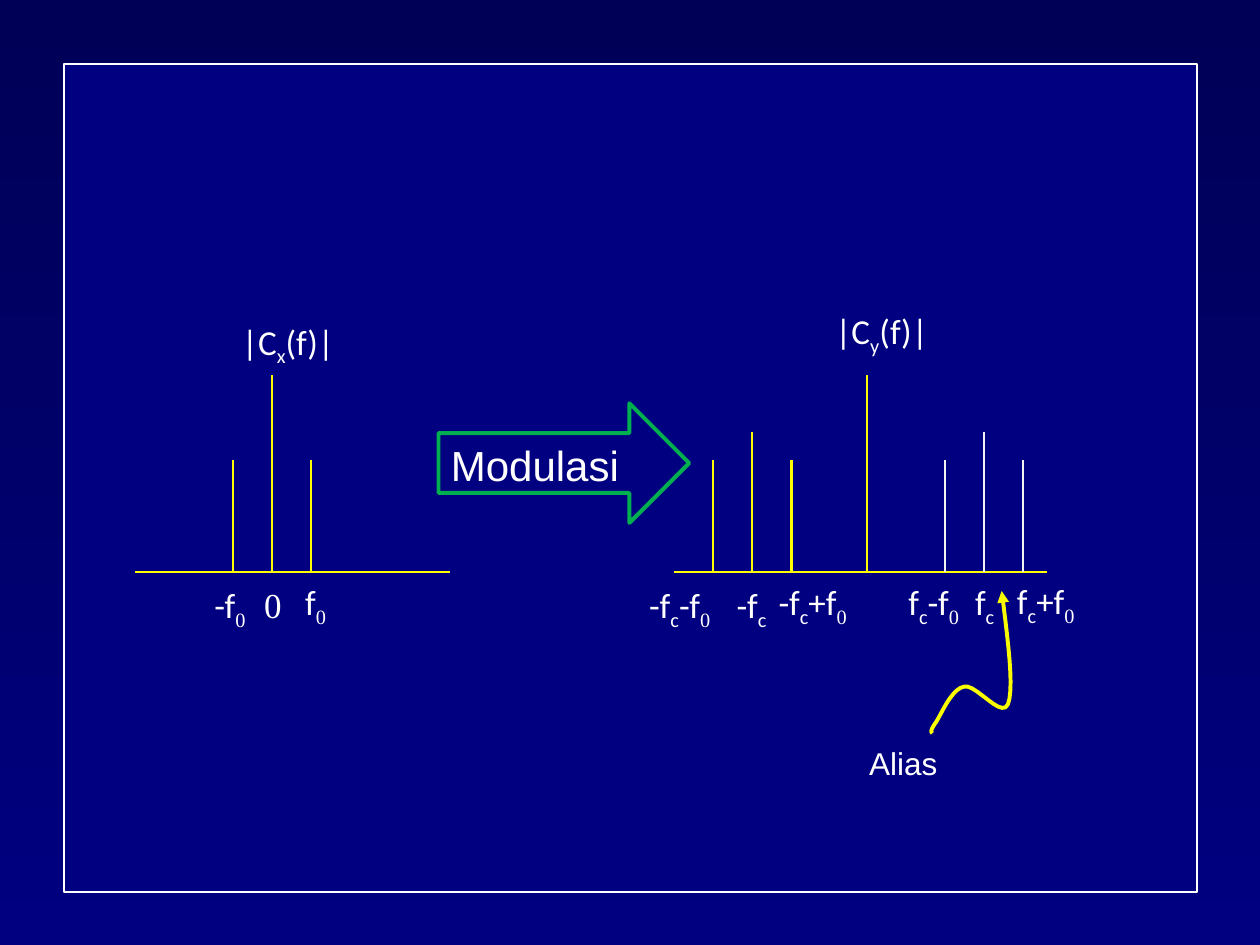
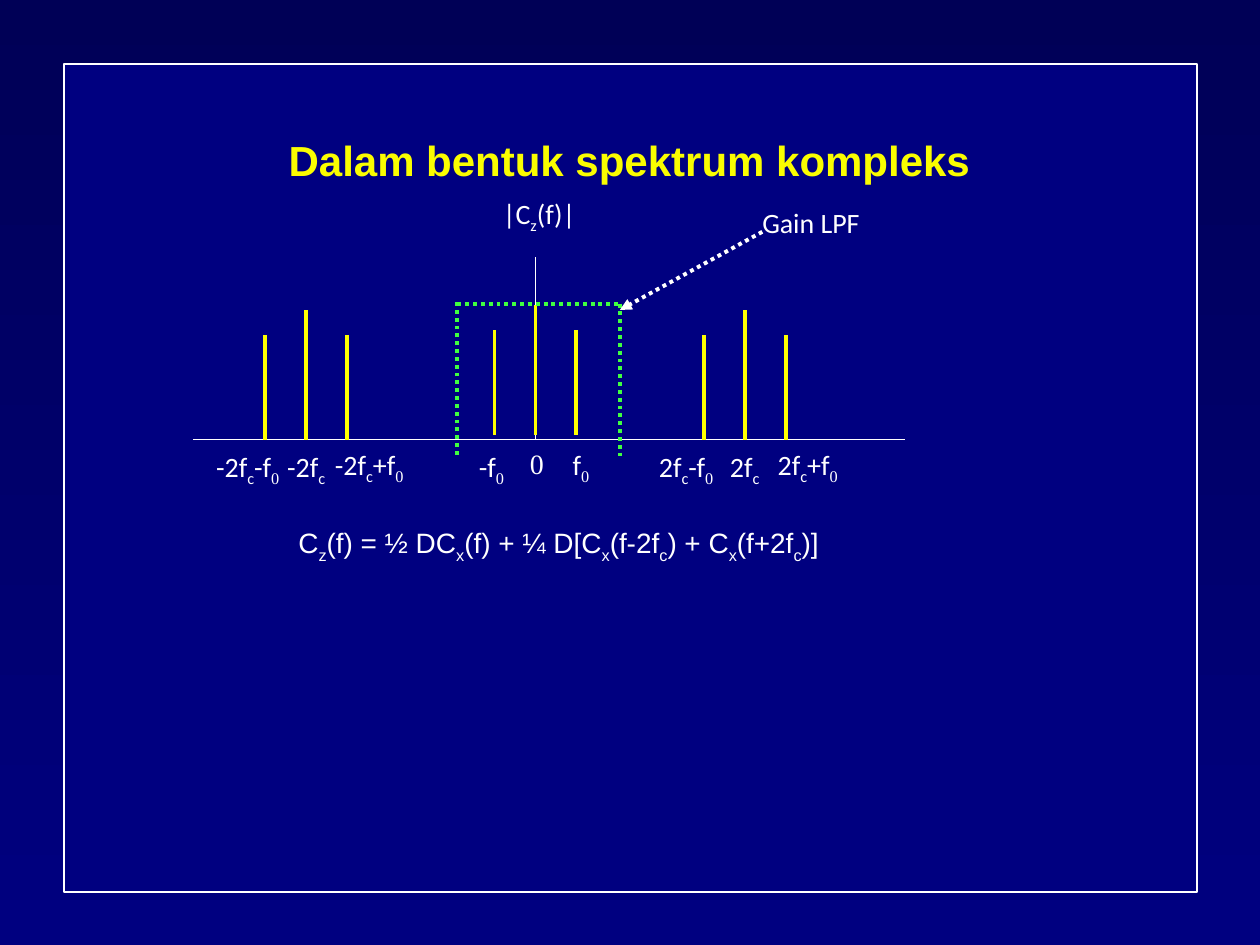
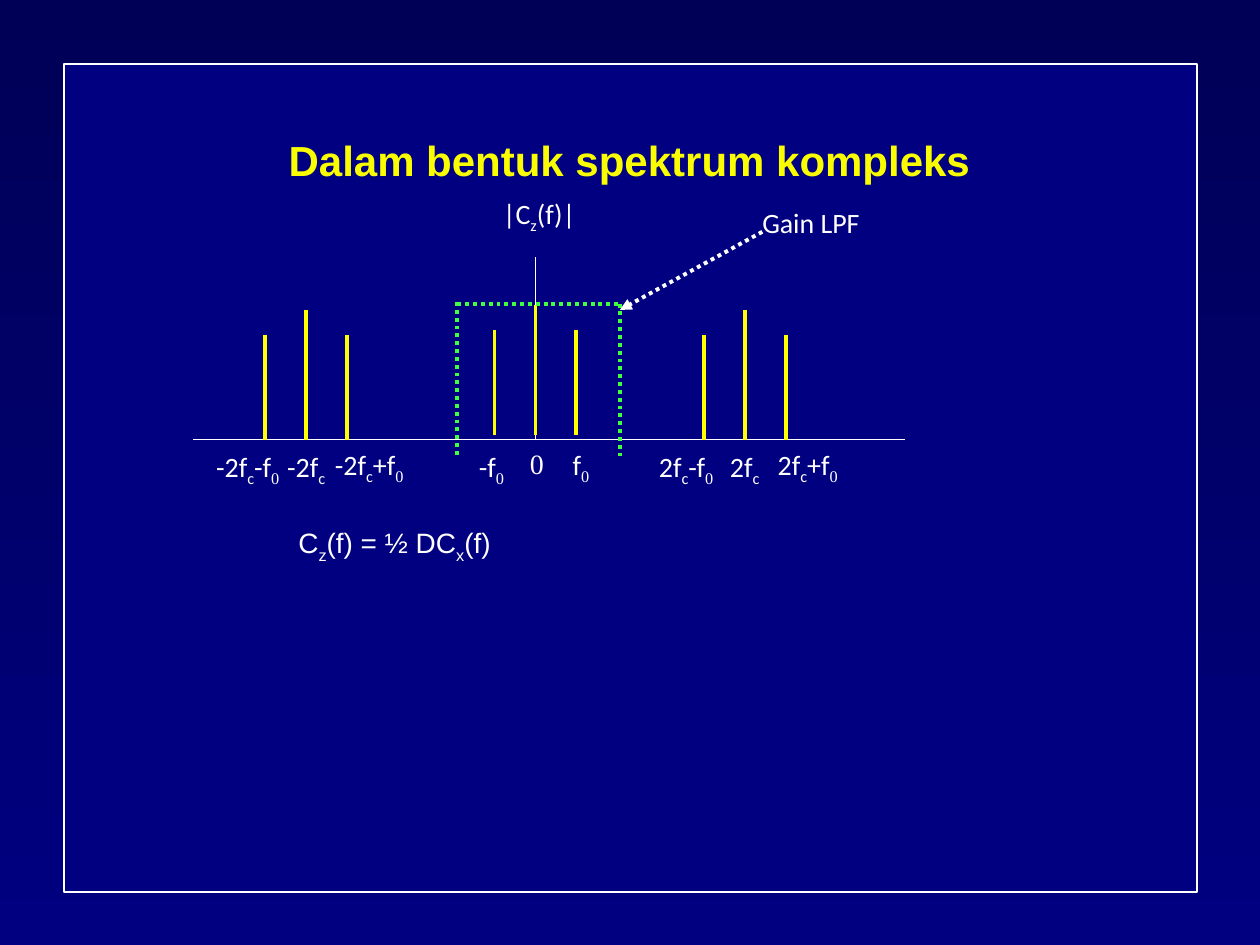
from pptx import Presentation
from pptx import util as u
from pptx.dml.color import RGBColor
from pptx.enum import dml, shapes, text
from pptx.oxml.ns import qn
from lxml import etree

WHITE, PALE, YELLOW, GOLD = "FFFFFF", "F2F2F2", "FFFF00", "FAFD00"
NAVY, DARK, GREEN, LIME = "000080", "000056", "00B050", "40FF40"
DOTTED = dml.MSO_LINE.ROUND_DOT
ALIGN = text.PP_ALIGN

# An underscore marks the next character as a subscript.
# Lobe: centre, colour, labels as (text, offset from centre, top, width).
MODULATION = dict(
    size=20, step=0.31, axis_color=YELLOW, stick_width=1.5,
    axes=[(1.07, 3.57, 2.16), (5.35, 8.31, 6.88)], axis_y=4.54, axis_top=2.98,
    stick_heights=(0.89, 1.11, 0.89),
    lobes=[
        (2.16, YELLOW, 4.54, [("-f_0", -0.49, 4.63, 0.31), ("0", -0.15, 4.63, 0.31),
                              ("f_0", 0.19, 4.61, 0.31)]),
        (5.97, YELLOW, 4.54, [("-f_c-f_0", -0.97, 4.63, 0.79), ("-f_c", -0.16, 4.63, 0.31),
                              ("-f_c+f_0", 0.18, 4.61, 0.6)]),
        (7.81, PALE, 4.54, [("f_c-f_0", -0.62, 4.61, 0.44), ("f_c", -0.15, 4.61, 0.31),
                            ("f_c+f_0", 0.19, 4.6, 0.6)]),
    ],
    captions=[("|C_x(f)|", 1.92, 2.54, 0.82), ("|C_y(f)|", 6.63, 2.46, 0.95)],
)


def side_labels(carrier):
    return [(carrier + "-f_0", -0.74, 3.57, 0.55), (carrier, -0.16, 3.57, 0.32),
            (carrier + "+f_0", 0.19, 3.55, 0.62)]


DEMODULATION = dict(
    size=16, step=0.325, axis_color=WHITE, stick_width=2.25,
    axes=[(1.53, 7.18, 4.25)], axis_y=3.49, axis_top=2.04,
    stick_heights=(0.83, 1.03, 0.83),
    lobes=[
        (2.43, YELLOW, 3.49, side_labels("-2f_c")),
        (4.25, YELLOW, 3.45, [("-f_0", -0.51, 3.57, 0.32), ("0", -0.15, 3.54, 0.32),
                              ("f_0", 0.2, 3.55, 0.32)]),
        (5.91, YELLOW, 3.49, side_labels("2f_c")),
    ],
    captions=[("|C_z(f)|", 3.99, 1.56, 0.65), ("Gain LPF", 6.05, 1.63, 1.45)],
)
TITLE = "Dalam bentuk spektrum kompleks"
FORMULAS = ["C_z(f) = ½ DC_x(f) + ¼ D[C_x(f-2f_c) + C_x(f+2f_c)]",
            "C_z(f) = ½ DC_x(f)"]
FILTER_EDGES = [((3.63, 3.61), (3.63, 2.37)), ((3.63, 2.41), (4.92, 2.41)),
                ((4.92, 2.41), (4.92, 3.64))]
ALIAS_START = (7.4, 5.82)
ALIAS_CURVES = [  # two control points and an end point each
    ((7.39, 5.81), (7.38, 5.8), (7.43, 5.73)),
    ((7.47, 5.67), (7.55, 5.47), (7.65, 5.45)),
    ((7.74, 5.42), (7.95, 5.71), (8, 5.59)),
    ((8.05, 5.46), (8, 5.08), (7.95, 4.69)),
]


def rgb(value):
    return RGBColor.from_string(value)


def inches(*values):
    return [u.Inches(value) for value in values]


def style_line(line, color, width, dash=None, arrow=False):
    line.color.rgb = rgb(color)
    line.width = u.Pt(width)
    if dash:
        line.dash_style = dash
    if arrow:
        etree.SubElement(line._get_or_add_ln(), qn("a:tailEnd"), type="triangle")


def add_line(slide, start, end, color, width, dash=None, arrow=False):
    line = slide.shapes.add_connector(shapes.MSO_CONNECTOR.STRAIGHT, *inches(*start, *end))
    style_line(line.line, color, width, dash, arrow)
    etree.SubElement(line._element.spPr, qn("a:effectLst"))


def style_run(run, size, font, color=WHITE):
    run.font.size = u.Pt(size)
    run.font.name = font
    run.font.color.rgb = rgb(color)


def write_math(para, markup, size, font, drop, zero_font):
    """Write text in which each underscore lowers the character after it."""
    first, *rest = markup.split("_")
    pieces = [(first, False)]
    for part in rest:
        pieces += [(part[0], True), (part[1:], False)]
    for words, lowered in pieces:
        if words:
            run = para.add_run()
            run.text = words
            style_run(run, size, zero_font if words == "0" else font)
            if lowered:
                run._r.get_or_add_rPr().set("baseline", str(-1000 * drop))


def add_label(slide, markup, left, top, width, size, align=ALIGN.CENTER):
    box = slide.shapes.add_textbox(*inches(left, top, width, 0.45))
    frame = box.text_frame
    frame.word_wrap = True
    frame.margin_left = frame.margin_right = frame.margin_top = frame.margin_bottom = 0
    para = frame.paragraphs[0]
    para.alignment = align
    para.space_after = u.Pt(10)
    write_math(para, markup, size, "Calibri", 25, "Times New Roman")


def add_spectrum(slide, plot):
    base = plot["axis_y"]
    for left, right, origin in plot["axes"]:
        for start, end in [((left, base), (right, base)),
                           ((origin, base), (origin, plot["axis_top"]))]:
            add_line(slide, start, end, plot["axis_color"], 0.75)
    for center, color, foot, labels in plot["lobes"]:
        for place, height in zip((-1, 0, 1), plot["stick_heights"]):
            x = center + place * plot["step"]
            add_line(slide, (x, foot), (x, foot - height), color, plot["stick_width"])
        for markup, offset, top, width in labels:
            add_label(slide, markup, center + offset, top, width, plot["size"])
    for markup, left, top, width in plot["captions"]:
        add_label(slide, markup, left, top, width, plot["size"], ALIGN.LEFT)


def curve_points(start, curves, steps=10):
    for first, second, end in curves:
        for step in range(1, steps + 1):
            t = step / steps
            weights = ((1 - t) ** 3, 3 * t * (1 - t) ** 2, 3 * t * t * (1 - t), t ** 3)
            yield tuple(sum(w * point[axis] for w, point in
                            zip(weights, (start, first, second, end))) for axis in (0, 1))
        start = end


def style_master(deck, slide):
    """Give the master its gradient and the framed panel, made on a slide first."""
    master = deck.slide_master
    fill = master.background.fill
    fill.gradient()
    fill.gradient_angle = 270
    for stop, color, position in zip(fill.gradient_stops, (DARK, NAVY), (0, 1)):
        stop.color.rgb = rgb(color)
        stop.position = position
    panel = slide.shapes.add_shape(shapes.MSO_SHAPE.RECTANGLE, *inches(0.51, 0.51, 8.99, 6.57))
    panel.shadow.inherit = False
    panel.fill.solid()
    panel.fill.fore_color.rgb = rgb(NAVY)
    style_line(panel.line, WHITE, 1)
    master.shapes._spTree.insert(2, panel._element)


def build_modulation(slide):
    add_spectrum(slide, MODULATION)
    arrow = slide.shapes.add_shape(shapes.MSO_SHAPE.RIGHT_ARROW, *inches(3.48, 3.2, 1.99, 0.95))
    arrow.adjustments[1] = 0.5
    arrow.shadow.inherit = False
    arrow.fill.background()
    style_line(arrow.line, GREEN, 2.25)
    alias = slide.shapes.add_textbox(*inches(6.8, 5.86, 0.75, 0.4))
    for box, words, size in [(arrow, "Modulasi", 24), (alias, "Alias", 18)]:
        box.text_frame.text = words
        box.text_frame.vertical_anchor = text.MSO_ANCHOR.TOP
        para = box.text_frame.paragraphs[0]
        para.alignment = ALIGN.LEFT
        style_run(para.runs[0], size, "Arial")

    builder = slide.shapes.build_freeform(*inches(*ALIAS_START))
    builder.add_line_segments([inches(*point) for point in
                               curve_points(ALIAS_START, ALIAS_CURVES)], close=False)
    pointer = builder.convert_to_shape()
    pointer.shadow.inherit = False
    pointer.fill.background()
    style_line(pointer.line, GOLD, 2.25, arrow=True)


def build_demodulation(slide, formula):
    title = slide.shapes.title
    title.left, title.top, title.width, title.height = inches(1.08, 0.67, 7.83, 1.25)
    title.text_frame.text = TITLE
    title.text_frame.vertical_anchor = text.MSO_ANCHOR.MIDDLE
    para = title.text_frame.paragraphs[0]
    para.alignment = ALIGN.CENTER
    para.line_spacing = 0.9
    style_run(para.runs[0], 24, "Arial", GOLD)
    para.runs[0].font.bold = True

    add_spectrum(slide, DEMODULATION)
    for start, end in FILTER_EDGES:
        add_line(slide, start, end, LIME, 2.25, DOTTED)
    add_line(slide, (6.05, 1.84), (4.92, 2.46), WHITE, 2.25, DOTTED, arrow=True)

    box = slide.shapes.add_textbox(*inches(2.27, 4.14, 6.17, 0.37))
    box.text_frame.word_wrap = True
    box.text_frame.vertical_anchor = text.MSO_ANCHOR.MIDDLE
    para = box.text_frame.paragraphs[0]
    para.alignment = ALIGN.JUSTIFY
    write_math(para, formula, 16, "Arial", 30, "Arial")


def main():
    deck = Presentation()
    deck.slide_width, deck.slide_height = inches(10, 7.5)
    title_only, blank = deck.slide_layouts[5], deck.slide_layouts[6]
    slide = deck.slides.add_slide(blank)
    style_master(deck, slide)
    build_modulation(slide)
    for formula in FORMULAS:
        build_demodulation(deck.slides.add_slide(title_only), formula)
    deck.save("out.pptx")


if __name__ == "__main__":
    main()
